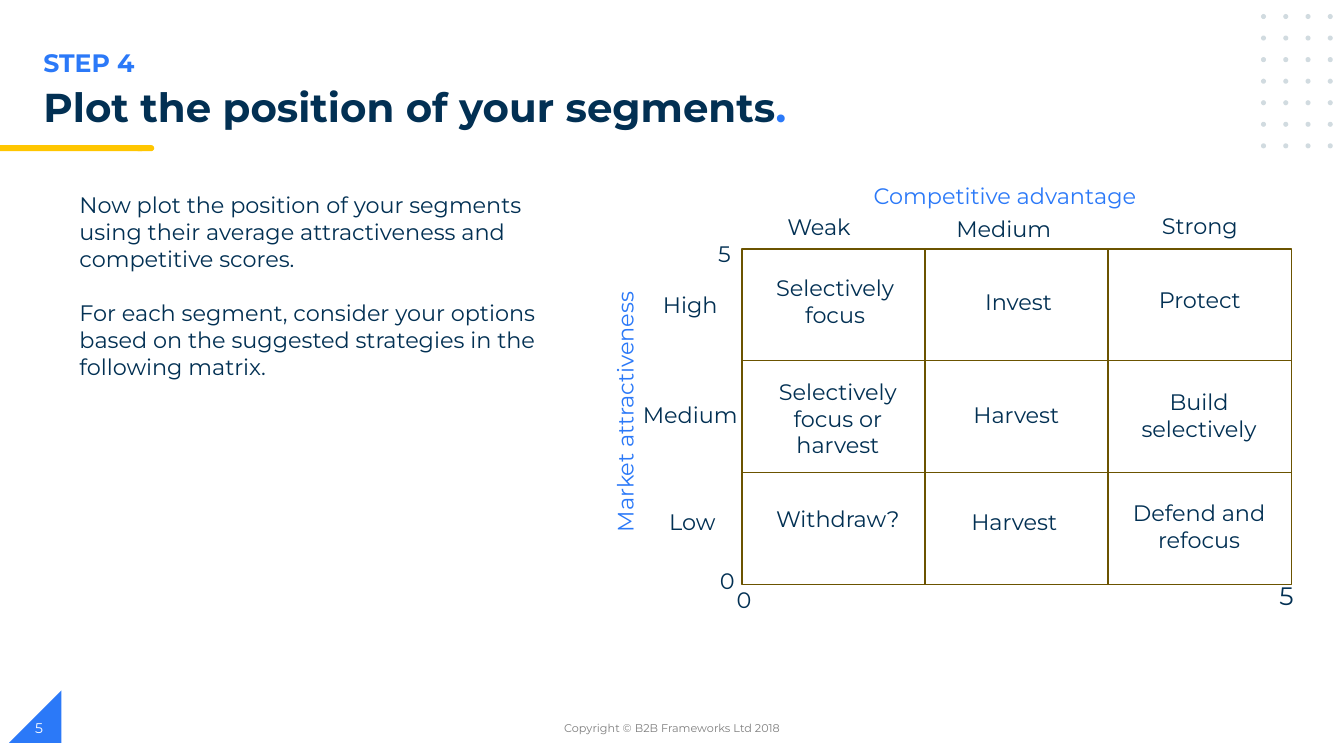
from pptx import Presentation
from pptx.dml.color import RGBColor
from pptx.enum.shapes import MSO_SHAPE
from pptx.enum.text import MSO_ANCHOR, MSO_AUTO_SIZE, PP_ALIGN
from pptx.util import Pt

RECT, OVAL = MSO_SHAPE.RECTANGLE, MSO_SHAPE.OVAL
CAP, WEDGE = MSO_SHAPE.FLOWCHART_TERMINATOR, MSO_SHAPE.RIGHT_TRIANGLE
LEFT, MID = PP_ALIGN.LEFT, PP_ALIGN.CENTER
TOP, CORE = MSO_ANCHOR.TOP, MSO_ANCHOR.MIDDLE
FIXED = MSO_AUTO_SIZE.NONE
FONT = "Montserrat"
COLORS = {"blue": "2B79F8", "navy": "023053", "gold": "FFC600",
          "dot": "D1DBE0", "grid": "6B5300", "gray": "7F7F7F",
          "white": "FFFFFF"}

# Text with its left and top, measured from the corner of the grid
LABELS = [
    ("Weak", 0, -29), ("Medium", 132, -27.5), ("Strong", 272, -29.5),
    ("High", -92, 26.5), ("Medium", -92, 105), ("Low", -90.5, 181.5),
    ("Selectively focus", 11.5, 14.5), ("Invest", 142.5, 24.5),
    ("Protect", 272, 23),
    ("Selectively focus or harvest", 13.5, 88.5), ("Harvest", 141, 105),
    ("Build selectively", 271.5, 96),
    ("Withdraw?", 13.5, 179.5), ("Harvest", 139.5, 181.5),
    ("Defend and refocus", 271.5, 175.5),
    ("5", -67.5, -9.5), ("0", -65.5, 224), ("0", -53.5, 237.5),
]
BODY = [
    "Now plot the position of your segments using their average "
    "attractiveness and competitive scores.",
    "For each segment, consider your options based on the suggested "
    "strategies in the following matrix.",
]


def rgb(name):
    return RGBColor.from_string(COLORS[name])


def add_run(para, text, size, color, bold=False):
    run = para.add_run()
    run.text = text
    font = run.font
    font.name, font.size, font.bold = FONT, Pt(size), bold
    font.color.rgb = rgb(color)


def add_text(slide, box, lines, size=16, color="navy", bold=False,
             align=LEFT, anchor=TOP, gap=0):
    """Add a text box with one paragraph per line, gap points apart."""
    shape = slide.shapes.add_textbox(*map(Pt, box))
    frame = shape.text_frame
    frame.word_wrap = True
    frame.vertical_anchor = anchor
    for i, line in enumerate(lines):
        para = frame.add_paragraph() if i else frame.paragraphs[0]
        para.alignment = align
        if i:
            para.space_before = Pt(gap)
        add_run(para, line, size, color, bold)
    return shape


def add_form(slide, kind, box, fill=None, line=None):
    shape = slide.shapes.add_shape(kind, *map(Pt, box))
    shape.shadow.inherit = False
    if fill:
        shape.fill.solid()
        shape.fill.fore_color.rgb = rgb(fill)
    else:
        shape.fill.background()
    if line:
        shape.line.color.rgb = rgb(line)
        shape.line.width = Pt(1)
    else:
        shape.line.fill.background()
    return shape


def add_dots(slide, left, top, step_x, step_y):
    for row in range(7):
        for col in range(4):
            box = (left + col * step_x, top + row * step_y, 3.6, 3.6)
            add_form(slide, OVAL, box, "dot")


def add_head(slide, left, top, width):
    add_form(slide, CAP, (96.5, top + 73.5, 13.7, 4.3), "gold")
    add_form(slide, RECT, (0, top + 73.5, 101.5, 4.3), "gold")
    add_text(slide, (left, top, width, 29), ["STEP 4"], 18, "blue", True)
    title = slide.shapes.title
    title.left, title.top = Pt(left), Pt(top + 28.8)
    title.width, title.height = Pt(width), Pt(40.3)
    frame = title.text_frame
    frame.auto_size, frame.word_wrap = FIXED, True
    frame.vertical_anchor = TOP
    para = frame.paragraphs[0]
    para.alignment, para.line_spacing = LEFT, 0.9
    add_run(para, "Plot the position of your segments", 28.8, "navy", True)
    add_run(para, ".", 28.8, "blue", True)


def add_matrix(slide, left, top, width, height):
    wide, high = width / 3, height / 3
    for row in range(3):
        for col in range(3):
            box = (left + col * wide, top + row * high, wide, high)
            add_form(slide, RECT, box, line="grid")
    for text, dx, dy in LABELS:
        add_text(slide, (left + dx, top + dy, 110, 26.5), [text], align=MID)
    add_text(slide, (left + 334, top + 233, 110, 29), ["5"], 18, align=MID)
    add_text(slide, (left + 87, top - 51, 217.5, 26.5),
             ["Competitive advantage"], color="blue")
    side = add_text(slide, (left - 193.5, top + 86.5, 219.5, 26.5),
                    ["Market attractiveness"], color="blue")
    side.rotation = 270


def add_foot(slide, left, top, size):
    wedge = add_form(slide, WEDGE, (left, top, size, size), "blue")
    wedge.element.spPr.xfrm.set("flipH", "1")
    base = top + 12.2
    add_text(slide, (318.2, base, 324, 28.8),
             ["Copyright © B2B Frameworks Ltd 2018"], 8, "gray",
             align=MID, anchor=CORE)
    add_text(slide, (left + 11.5, base, 216, 28.8), ["5"], 10, "white",
             anchor=CORE)


def main():
    deck = Presentation()
    deck.slide_width, deck.slide_height = Pt(960), Pt(540)
    slide = deck.slides.add_slide(deck.slide_layouts[5])
    add_dots(slide, 900.7, 10, 15.9, 15.4)
    add_head(slide, 23.8, 30.2, 600)
    add_text(slide, (49.7, 133.2, 356.4, 143.3), BODY, gap=19.5)
    add_matrix(slide, 530, 177.8, 392.4, 239.8)
    add_foot(slide, 6.5, 493.2, 37.4)
    deck.save("out.pptx")


if __name__ == "__main__":
    main()
